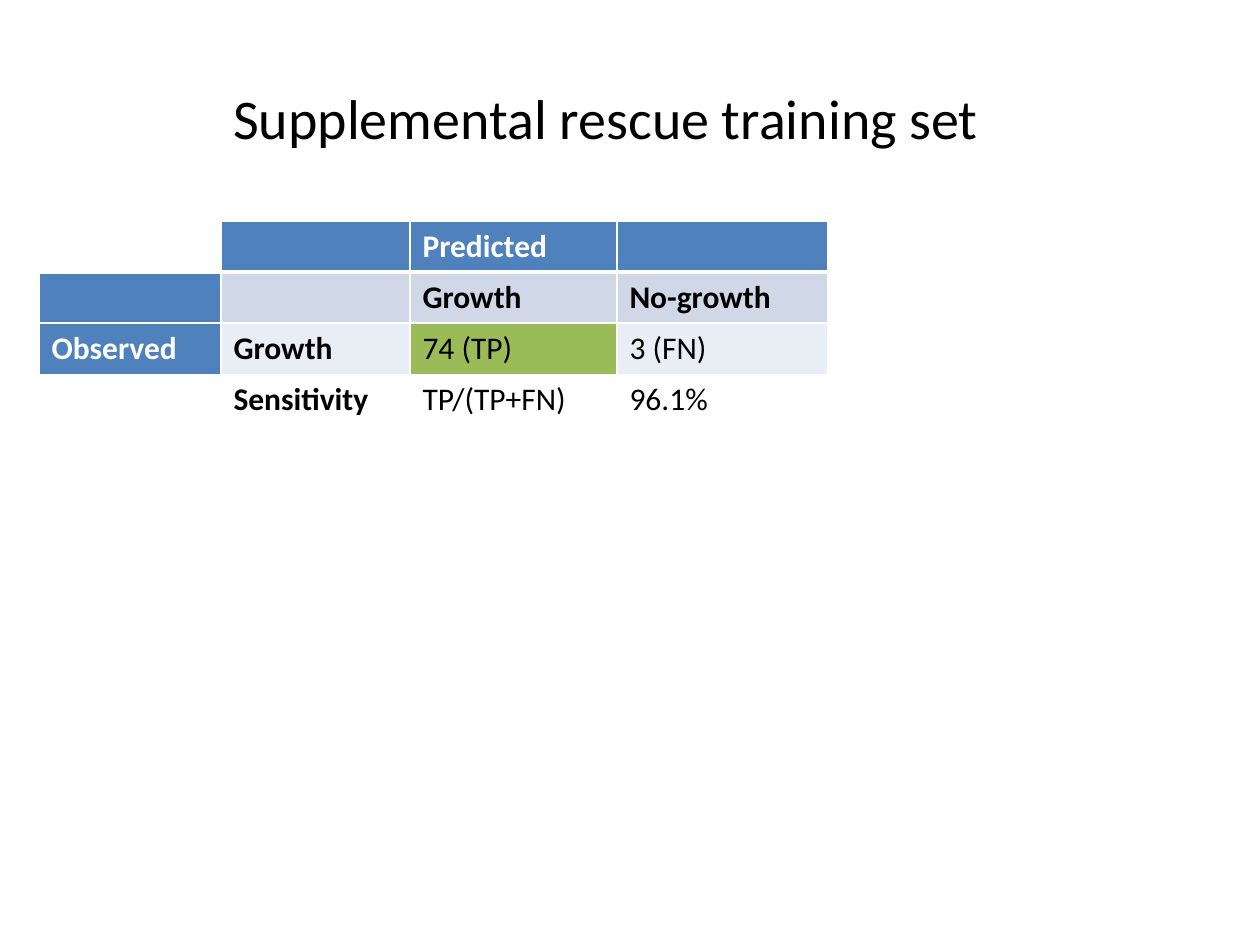
from dataclasses import dataclass

from lxml.etree import SubElement
from pptx import Presentation
from pptx.dml.color import RGBColor
from pptx.enum.text import MSO_ANCHOR, PP_ALIGN
from pptx.oxml.ns import qn
from pptx.util import Emu, Pt

PX_PER_INCH = 126
FONT = "Calibri"
BLACK, WHITE = "000000", "FFFFFF"
BLUE, GREEN = "4F81BD", "9BBB59"
BAND_DARK, BAND_LIGHT = "D0D8E8", "E9EDF4"

COLUMN_WIDTHS = (182, 189, 207, 211)
ROW_HEIGHT = 51


@dataclass(frozen=True)
class Entry:
    text: str = ""
    fill: str = WHITE
    color: str = BLACK
    bold: bool = True


CONFUSION_ROWS = (
    (Entry(), Entry(fill=BLUE), Entry("Predicted", BLUE, WHITE), Entry(fill=BLUE)),
    (Entry(fill=BLUE), Entry(fill=BAND_DARK), Entry("Growth", BAND_DARK),
     Entry("No-growth", BAND_DARK)),
    (Entry("Observed", BLUE, WHITE), Entry("Growth", BAND_LIGHT),
     Entry("74 (TP)", GREEN, bold=False), Entry("3 (FN)", BAND_LIGHT, bold=False)),
    (Entry(), Entry("Sensitivity"), Entry("TP/(TP+FN)", bold=False),
     Entry("96.1%", bold=False)),
)


def px(length: int) -> Emu:
    return Emu(round(length * 914400 / PX_PER_INCH))


def rgb(value: str) -> RGBColor:
    return RGBColor.from_string(value)


def format_paragraph(para, size: int, color: str, bold: bool) -> None:
    para.font.name = FONT
    para.font.size = Pt(size)
    para.font.bold = bold
    para.font.color.rgb = rgb(color)


def add_border(cell, side: str, points: int) -> None:
    """Draw one white cell edge; side is L, R, T or B."""
    properties = cell._tc.get_or_add_tcPr()
    line = SubElement(properties, qn(f"a:ln{side}"), w=str(Pt(points)))
    fill = SubElement(line, qn("a:solidFill"))
    SubElement(fill, qn("a:srgbClr"), val=WHITE)


def fill_cell(cell, entry: Entry, top: int, bottom: int) -> None:
    """Write one entry; top and bottom are border widths in points."""
    for side, points in (("L", 1), ("R", 1), ("T", top), ("B", bottom)):
        add_border(cell, side, points)
    cell.fill.solid()
    cell.fill.fore_color.rgb = rgb(entry.fill)
    cell.text = entry.text
    format_paragraph(cell.text_frame.paragraphs[0], 18, entry.color, entry.bold)


def add_title(page, text: str) -> None:
    title = page.shapes.title
    title.left, title.top = px(39), px(38)
    title.width, title.height = px(1134), px(158)
    title.text_frame.text = text
    title.text_frame.vertical_anchor = MSO_ANCHOR.MIDDLE
    para = title.text_frame.paragraphs[0]
    para.alignment = PP_ALIGN.CENTER
    format_paragraph(para, 32, BLACK, False)


def add_confusion_table(page) -> None:
    row_count = len(CONFUSION_ROWS)
    table = page.shapes.add_table(
        row_count, len(COLUMN_WIDTHS), px(39), px(221),
        px(sum(COLUMN_WIDTHS)), px(ROW_HEIGHT * row_count),
    ).table
    for column, width in zip(table.columns, COLUMN_WIDTHS):
        column.width = px(width)
    for index, entries in enumerate(CONFUSION_ROWS):
        table.rows[index].height = px(ROW_HEIGHT)
        top = 3 if index == 1 else 1
        bottom = 3 if index == 0 else 1
        for cell, entry in zip(table.rows[index].cells, entries):
            fill_cell(cell, entry, top, bottom)


def main() -> None:
    deck = Presentation()
    deck.slide_width, deck.slide_height = px(1260), px(945)
    page = deck.slides.add_slide(deck.slide_layouts[5])
    add_title(page, "Supplemental rescue training set")
    add_confusion_table(page)
    deck.save("out.pptx")


if __name__ == "__main__":
    main()
